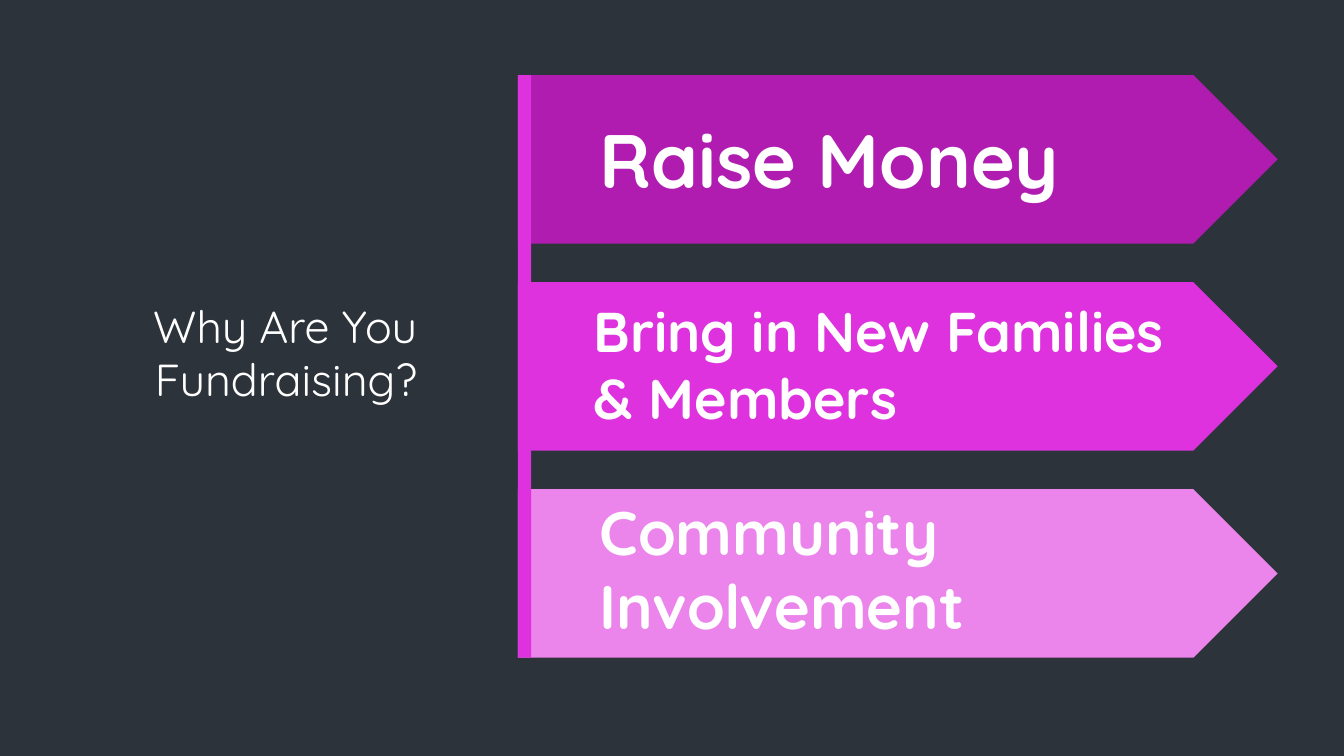
from pptx import Presentation
from pptx.dml.color import RGBColor
from pptx.enum.shapes import MSO_SHAPE
from pptx.enum.text import PP_ALIGN
from pptx.util import Pt

ARROW, RECT = MSO_SHAPE.PENTAGON, MSO_SHAPE.RECTANGLE
LEFT, RIGHT = PP_ALIGN.LEFT, PP_ALIGN.RIGHT
FONT = "Quicksand"
HUES = {"back": "2C333A", "text": "FFFFFF", "dark": "B01CB0",
        "main": "DE32DE", "pale": "EB84EB"}

# label, fill, text size, then the label's indent, drop, width and height
GOALS = [
    ("Raise Money", "dark", 54, 51.1, 23.8, 440, 72.7),
    ("Bring in New Families & Members", "main", 40, 46.8, 6.5, 440, 104.4),
    ("Community Involvement", "pale", 44, 51.1, 0, 483.8, 113.8),
]


def color(name):
    return RGBColor.from_string(HUES[name])


def add_block(slide, kind, box, fill):
    block = slide.shapes.add_shape(kind, *map(Pt, box))
    block.shadow.inherit = False
    block.fill.solid()
    block.fill.fore_color.rgb = color(fill)
    block.line.fill.background()


def add_text(slide, text, box, size=32, bold=False, align=LEFT):
    frame = slide.shapes.add_textbox(*map(Pt, box)).text_frame
    frame.word_wrap = True
    frame.text = text
    for para in frame.paragraphs:
        para.alignment = align
        font = para.runs[0].font
        font.name, font.size, font.bold = FONT, Pt(size), bold
        font.color.rgb = color("text")


def add_title(slide, box):
    add_text(slide, "Why Are You\nFundraising?", box, align=RIGHT)


def add_goals(slide, box, tall=120.4, bar=9.4):
    left, top, width, height = box
    step = (height - tall) / (len(GOALS) - 1)
    # Arrows with their labels
    for row, (label, fill, size, indent, drop, wide, high) in enumerate(GOALS):
        y = top + row * step
        add_block(slide, ARROW, (left, y, width, tall), fill)
        add_text(slide, label, (left + indent, y + drop, wide, high),
                 size=size, bold=True)
    # Bar along the left edge
    add_block(slide, RECT, (left, top, bar, height), "main")


def main():
    deck = Presentation()
    deck.slide_width, deck.slide_height = Pt(960), Pt(540)
    slide = deck.slides.add_slide(deck.slide_layouts[6])
    slide.background.fill.solid()
    slide.background.fill.fore_color.rgb = color("back")
    add_goals(slide, (370, 53.6, 542.6, 416.2))
    add_title(slide, (36, 209.5, 269.3, 85))
    deck.save("out.pptx")


if __name__ == "__main__":
    main()
